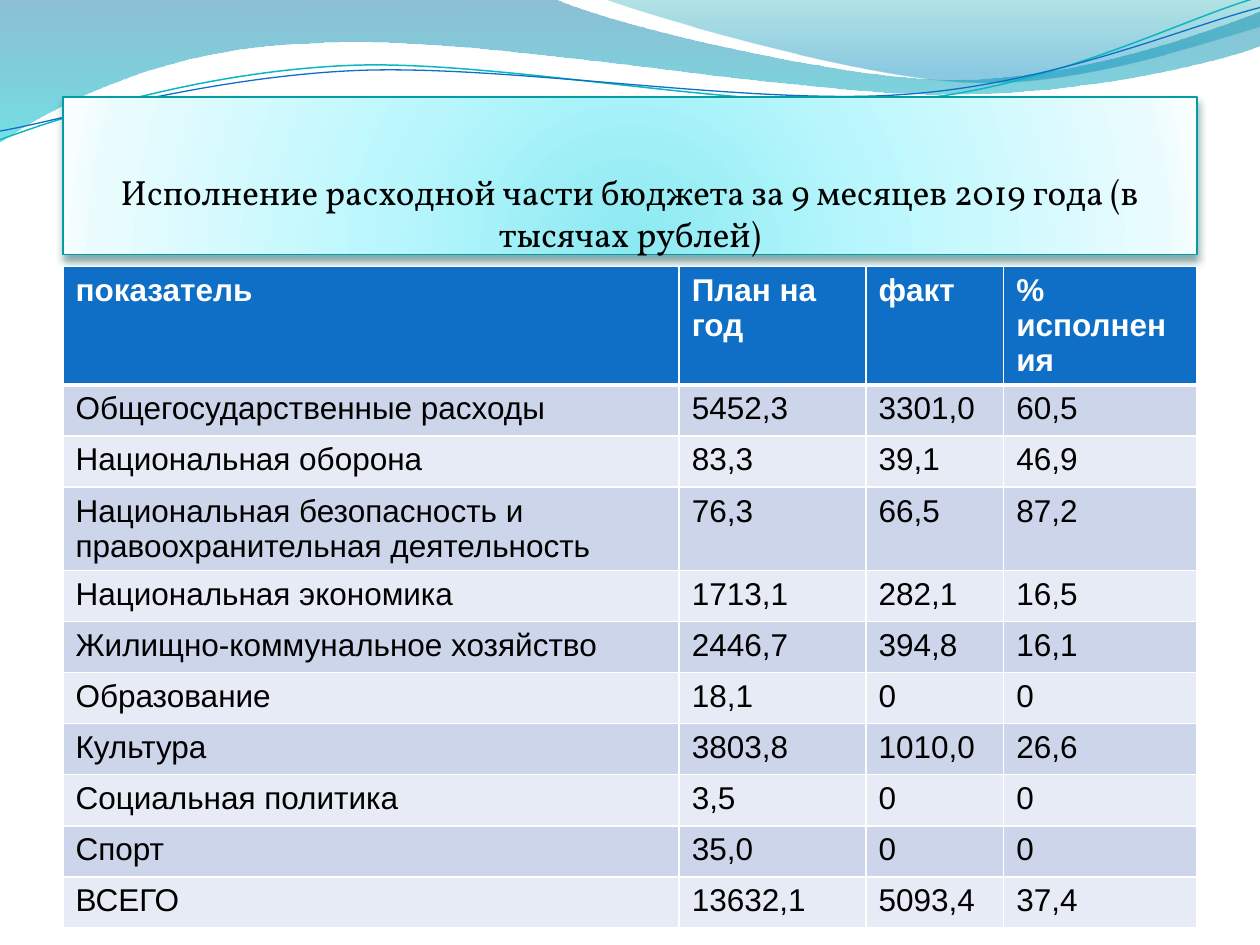
from math import cos, radians, sin

from lxml import etree
from pptx import Presentation
from pptx.dml.color import RGBColor
from pptx.enum.shapes import MSO_SHAPE
from pptx.enum.text import MSO_ANCHOR, PP_ALIGN
from pptx.oxml import parse_xml
from pptx.oxml.ns import qn
from pptx.util import Pt

RECT = MSO_SHAPE.RECTANGLE
BOTTOM = MSO_ANCHOR.BOTTOM
LEFT, CENTER = PP_ALIGN.LEFT, PP_ALIGN.CENTER
NS = "http://schemas.openxmlformats.org/drawingml/2006/main"

HUES = {
    "white": "FFFFFF", "black": "000000", "head": "0F6FC6",
    "odd": "CCD5EA", "even": "E7EBF5", "edge": "069CA3",
    "teal": "0AB8BF", "blue": "0F6FC6", "shade": "024B4E",
}

# Content
TITLE = "Исполнение расходной части бюджета за 9 месяцев 2019 года (в тысячах рублей)"
ROWS = [
    ("показатель", "План на год", "факт", "% исполнения"),
    ("Общегосударственные расходы", "5452,3", "3301,0", "60,5"),
    ("Национальная оборона", "83,3", "39,1", "46,9"),
    ("Национальная безопасность и правоохранительная деятельность", "76,3", "66,5", "87,2"),
    ("Национальная экономика", "1713,1", "282,1", "16,5"),
    ("Жилищно-коммунальное хозяйство", "2446,7", "394,8", "16,1"),
    ("Образование", "18,1", "0", "0"),
    ("Культура", "3803,8", "1010,0", "26,6"),
    ("Социальная политика", "3,5", "0", "0"),
    ("Спорт", "35,0", "0", "0"),
    ("ВСЕГО", "13632,1", "5093,4", "37,4"),
]
WIDTHS = (352.1, 106.8, 78.7, 110.4)
ROW_H = 29.2

# Gradient stops: position, colour, opacity in percent
DOWN = '<a:lin ang="5400000" scaled="0"/>'
GLOW = '<a:path path="circle"><a:fillToRect l="50000" t="130000" r="50000" b="-30000"/></a:path>'
PANEL = [(0, "8BE9F1", 100), (43, "B9F7FD", 100), (93, "EAFCFE", 100), (100, "F8FEFF", 100)]

# Outlines: a box, then a start point, lines (2 numbers) and Bezier curves (6 numbers)
BANDS = [
    ([(0, "0074A1", 45), (100, "00C6CF", 55)], (-0.7, -0.7, 721.4, 82.1),
     [(0, 0), (316.8, -0.7), (342.7, 12.2, 478.1, 45.4, 545.8, 45.4),
      (614.2, 45.4, 689.8, 18.7, 720, 6.5), (720.7, 25.9),
      (707.8, 31.7, 626.4, 54.7, 537.1, 54), (447.8, 54, 275, 20.2, 185, 24.5),
      (92.9, 25.9, 33.1, 59.8, -0.7, 81.4), (0, 0)]),
    ([(0, "00A1A9", 30), (80, "008BBF", 45)], (344.9, -0.7, 375.1, 50.4),
     [(344.9, -0.7), (366.5, 7.9, 491, 44.6, 553.7, 46.8),
      (616.3, 49.7, 691.9, 23, 720, 15.1), (720, 0), (344.9, -0.7)]),
]
TILT = 357.3
WAVES = [
    ("teal", 0.85, (-1.4, 15.8, 721.4, 51.1),
     [(0, 79.9), (34.6, 67, 113.8, 41, 199.4, 37.4),
      (284.4, 33.8, 427, 64.1, 513.4, 57.6), (599.8, 51.1, 675.4, 10.8, 718.6, -1.4)]),
    ("blue", 0.75, (-1.4, 21.6, 722.2, 41.8),
     [(0, 74.9), (33.8, 69.1, 118.1, 43.9, 203.8, 40.3),
      (290.2, 36.7, 429.8, 60.5, 516.2, 54), (601.9, 48.2, 677.5, 15.1, 720, 4.3)]),
]


def rgb(name):
    return RGBColor.from_string(HUES[name])


def write(frame, text, size=18, font="Arial", hue="black", bold=False, align=LEFT):
    frame.word_wrap = True
    para = frame.paragraphs[0]
    para.alignment = align
    run = para.add_run()
    run.text = text
    run.font.size, run.font.name, run.font.bold = Pt(size), font, bold
    run.font.color.rgb = rgb(hue)


def shade(shape, stops, tail):
    marks = "".join(
        f'<a:gs pos="{pos * 1000}"><a:srgbClr val="{hue}">'
        f'<a:alpha val="{alpha * 1000}"/></a:srgbClr></a:gs>'
        for pos, hue, alpha in stops)
    shape.fill.background()
    props = shape.element.spPr
    props.replace(props.find(qn("a:noFill")), parse_xml(
        f'<a:gradFill xmlns:a="{NS}" rotWithShape="1">'
        f"<a:gsLst>{marks}</a:gsLst>{tail}</a:gradFill>"))


def draw(slide, box, steps, tilt=0):
    """Outline in a box; points are turned back so that the tilt restores them."""
    left, top, wide, high = box
    turn = radians(-tilt)

    def local(x, y):
        dx, dy = x - left - wide / 2, y - top - high / 2
        return (Pt(wide / 2 + dx * cos(turn) - dy * sin(turn)),
                Pt(high / 2 + dx * sin(turn) + dy * cos(turn)))

    dots = [[local(*s[i:i + 2]) for i in range(0, len(s), 2)] for s in steps]
    pen = slide.shapes.build_freeform(*dots[0][0])
    pen.add_line_segments([d[-1] for d in dots[1:]], close=False)
    shape = pen.convert_to_shape()
    shape.left, shape.top, shape.width, shape.height = map(Pt, box)
    shape.rotation = tilt
    shape.shadow.inherit = False

    # Bezier segments
    track = shape.element.spPr.find(".//" + qn("a:path"))
    track.set("w", str(Pt(wide)))
    track.set("h", str(Pt(high)))
    for old, spots in zip(list(track), dots):
        tag = "a:cubicBezTo" if len(spots) == 3 else old.tag.replace("{" + NS + "}", "a:")
        new = etree.Element(qn(tag))
        for x, y in spots:
            etree.SubElement(new, qn("a:pt"), x=str(x), y=str(y))
        track.replace(old, new)
    return shape


def border(cell, **sides):
    props = cell._tc.get_or_add_tcPr()
    for i, (side, width) in enumerate(sides.items()):
        line = etree.Element(qn(f"a:ln{side}"), w=str(Pt(width)))
        fill = etree.SubElement(line, qn("a:solidFill"))
        etree.SubElement(fill, qn("a:srgbClr"), val=HUES["white"])
        props.insert(i, line)


deck = Presentation()
deck.slide_width, deck.slide_height = Pt(720), Pt(540)
slide = deck.slides.add_slide(deck.slide_layouts[6])

# Waves along the top
for stops, box, steps in BANDS:
    band = draw(slide, box, steps)
    shade(band, stops, DOWN)
    band.line.fill.background()
for hue, width, box, steps in WAVES:
    wave = draw(slide, box, steps, TILT)
    wave.fill.background()
    wave.line.color.rgb = rgb(hue)
    wave.line.width = Pt(width)

# Title panel
panel = slide.shapes.add_shape(RECT, Pt(36), Pt(55.4), Pt(648), Pt(90))
panel.shadow.inherit = False
shade(panel, PANEL, GLOW)
panel.line.color.rgb = rgb("edge")
panel.line.width = Pt(0.75)
panel.element.spPr.find(qn("a:effectLst")).append(parse_xml(
    f'<a:outerShdw xmlns:a="{NS}" blurRad="{Pt(4.5)}" dist="{Pt(3)}" dir="5400000" '
    f'rotWithShape="0"><a:srgbClr val="{HUES["shade"]}"><a:alpha val="48000"/>'
    "</a:srgbClr></a:outerShdw>"))
frame = panel.text_frame
frame.vertical_anchor = BOTTOM
frame.margin_left = frame.margin_right = frame.margin_bottom = 0
write(frame, TITLE, size=20, font="Vollkorn", align=CENTER)

# Budget table
table = slide.shapes.add_table(
    len(ROWS), len(WIDTHS), Pt(36), Pt(152.3), Pt(sum(WIDTHS)), Pt(ROW_H * len(ROWS))).table
for col, width in zip(table.columns, WIDTHS):
    col.width = Pt(width)
for r, row in enumerate(ROWS):
    table.rows[r].height = Pt(ROW_H)
    head = r == 0
    tint = "head" if head else "odd" if r % 2 else "even"
    for c, text in enumerate(row):
        cell = table.cell(r, c)
        cell.fill.solid()
        cell.fill.fore_color.rgb = rgb(tint)
        border(cell, L=1, R=1, T=3 if r == 1 else 1, B=3 if head else 1)
        write(cell.text_frame, text, hue="white" if head else "black", bold=head)

deck.save("out.pptx")
